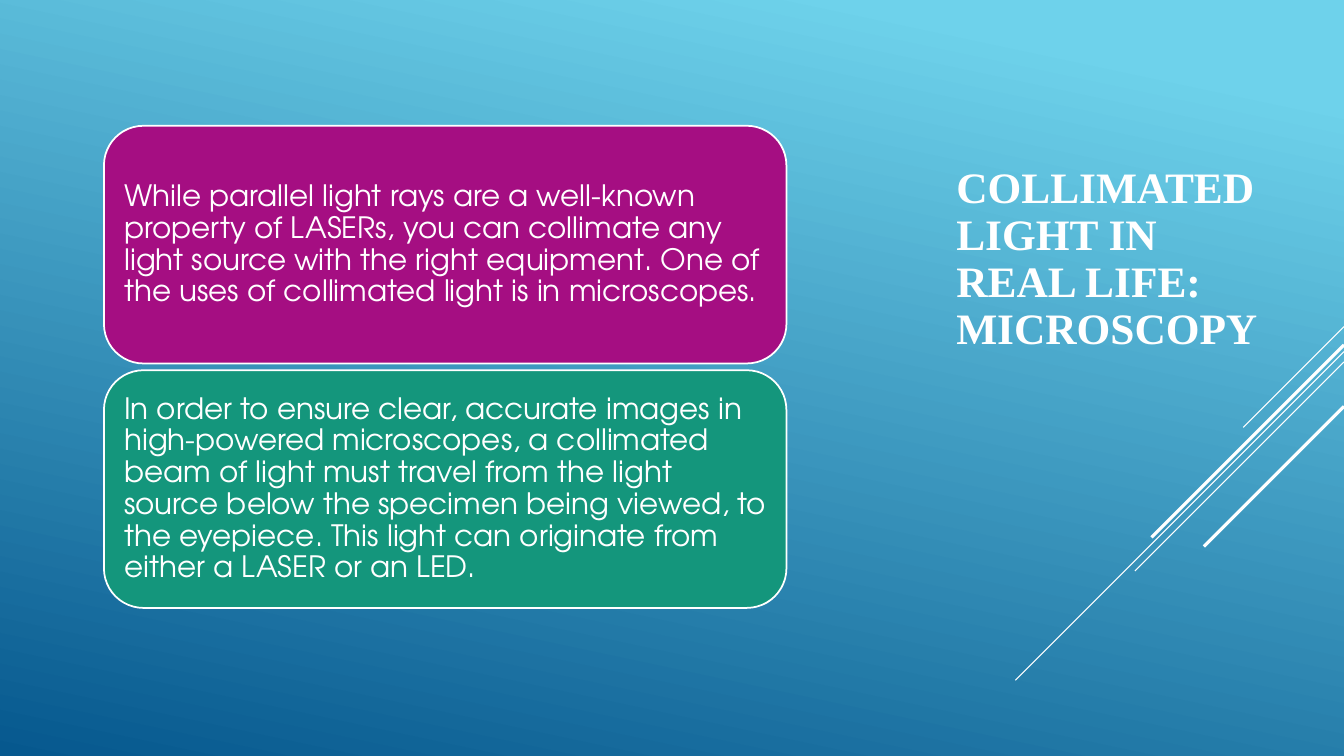
from lxml import etree
from pptx import Presentation
from pptx.dml.color import RGBColor
from pptx.enum.shapes import MSO_CONNECTOR, MSO_SHAPE
from pptx.enum.text import MSO_ANCHOR, MSO_AUTO_SIZE, PP_ALIGN
from pptx.oxml.ns import qn
from pptx.util import Cm, Pt

RECT, ROUNDED = MSO_SHAPE.RECTANGLE, MSO_SHAPE.ROUNDED_RECTANGLE
STRAIGHT = MSO_CONNECTOR.STRAIGHT
MIDDLE, LEFT = MSO_ANCHOR.MIDDLE, PP_ALIGN.LEFT
NO_AUTOSIZE = MSO_AUTO_SIZE.NONE

WHITE = RGBColor(0xFF, 0xFF, 0xFF)
SKY = RGBColor(0x6E, 0xD2, 0xEB)
DEEP_BLUE = RGBColor(0x06, 0x58, 0x8E)
PURPLE = RGBColor(0xA5, 0x0E, 0x82)
GREEN = RGBColor(0x14, 0x96, 0x7C)

prs = Presentation()
prs.slide_width, prs.slide_height = Cm(33.87), Cm(19.05)
s = prs.slides.add_slide(prs.slide_layouts[5])

# Gradient backdrop, sent behind the title
backdrop = s.shapes.add_shape(RECT, 0, 0, prs.slide_width, prs.slide_height)
backdrop.shadow.inherit = False
backdrop.line.fill.background()
backdrop.fill.gradient()
backdrop.fill.gradient_angle = 258
for stop, color, position in zip(backdrop.fill.gradient_stops, (SKY, DEEP_BLUE), (0.1, 1)):
    stop.color.rgb = color
    stop.position = position
s.shapes.element.insert(2, backdrop.element)

# Diagonal rays: start height on the right edge, run at 45 degrees, width
RAYS = [
    (8.23, 2.54, 0.75),
    (8.86, 8.28, 0.75),
    (9.12, 5.27, 0.75),
    (8.69, 4.85, 2.25),
    (10.24, 3.53, 2.25),
]
for top, run, width in RAYS:
    ray = s.shapes.add_connector(STRAIGHT, prs.slide_width, Cm(top),
                                 prs.slide_width - Cm(run), Cm(top + run))
    ray.line.color.rgb = WHITE
    ray.line.width = Pt(width)
    etree.SubElement(ray.element.spPr, qn("a:effectLst"))

# Title, raised by a deep bottom inset
title = s.shapes.title
title.left, title.top, title.width, title.height = Cm(23.85), Cm(2.62), Cm(8.46), Cm(9.02)
tf = title.text_frame
tf.text = "COLLIMATED LIGHT IN REAL LIFE: MICROSCOPY"
tf.word_wrap = True
tf.auto_size = NO_AUTOSIZE
tf.vertical_anchor = MIDDLE
tf.margin_left, tf.margin_right = Cm(0.25), Cm(0.3)
tf.margin_top, tf.margin_bottom = Cm(0.13), Cm(1.3)
p = tf.paragraphs[0]
p.alignment = LEFT
p.line_spacing = 0.9
p.font.name = "Times New Roman"
p.font.size = Pt(31)
p.font.bold = True
p.font.color.rgb = WHITE

# Text cards
CARDS = [
    (PURPLE, "While parallel light rays are a well-known property of LASERs, you can "
             "collimate any light source with the right equipment. One of the uses of "
             "collimated light is in microscopes."),
    (GREEN, "In order to ensure clear, accurate images in high-powered microscopes, a "
            "collimated beam of light must travel from the light source below the "
            "specimen being viewed, to the eyepiece. This light can originate from "
            "either a LASER or an LED."),
]
for i, (color, text) in enumerate(CARDS):
    card = s.shapes.add_shape(ROUNDED, Cm(2.62), Cm(3.17 + 6.16 * i), Cm(17.2), Cm(5.99))
    card.shadow.inherit = False
    card.fill.solid()
    card.fill.fore_color.rgb = color
    card.line.color.rgb = WHITE
    card.line.width = Pt(1.25)
    tf = card.text_frame
    tf.text = text
    tf.word_wrap = True
    tf.vertical_anchor = MIDDLE
    tf.margin_left = tf.margin_right = tf.margin_top = tf.margin_bottom = Cm(0.22)
    p = tf.paragraphs[0]
    p.alignment = LEFT
    p.line_spacing = 0.9
    p.font.name = "TeX Gyre Adventor"
    p.font.size = Pt(21)
    p.font.color.rgb = WHITE

prs.save("out.pptx")
